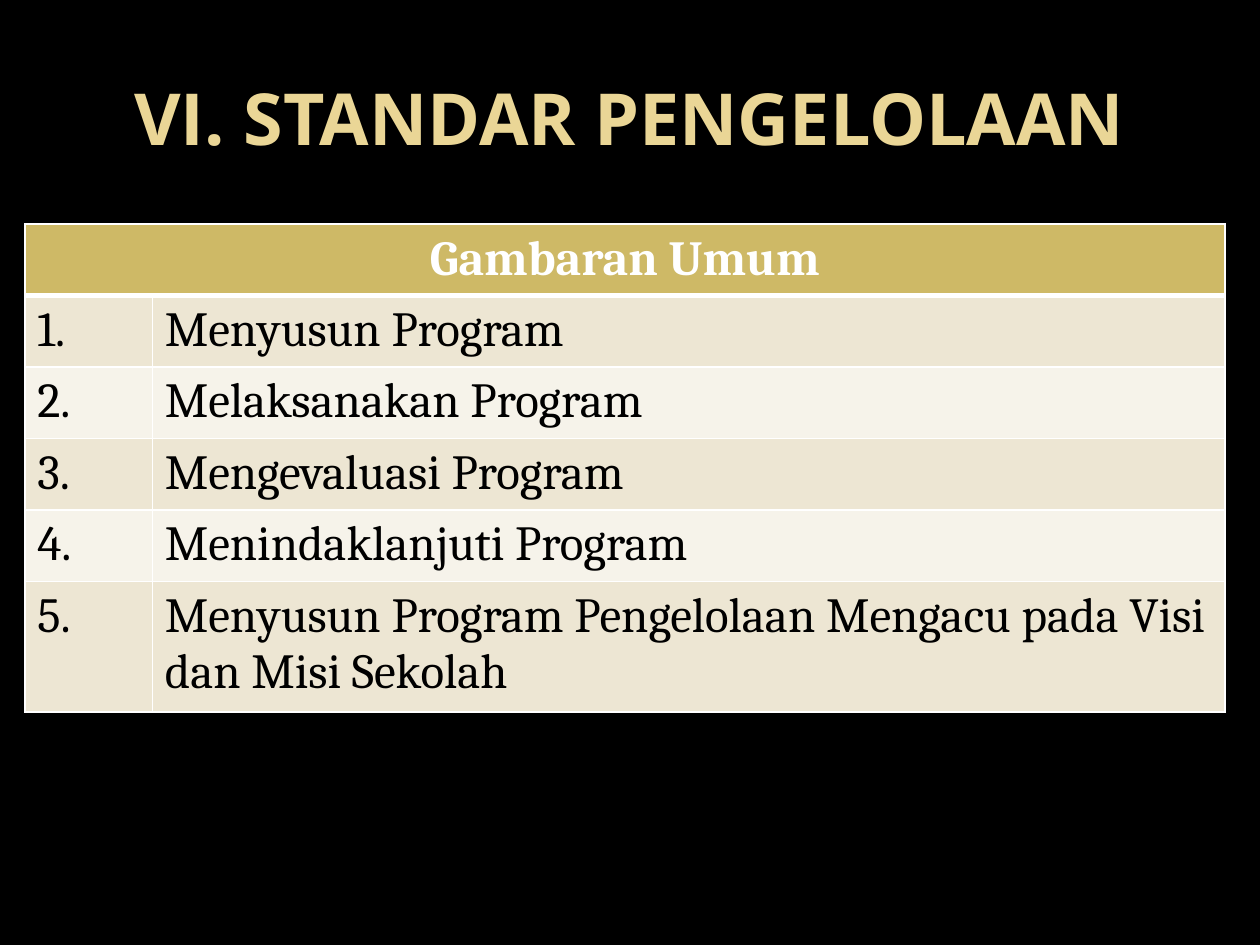
"""Build the slide on the management standard with its overview table."""
from lxml.etree import SubElement
from pptx import Presentation
from pptx.dml.color import RGBColor
from pptx.enum.text import MSO_ANCHOR as Anchor, PP_ALIGN as Align
from pptx.oxml.ns import qn
from pptx.util import Cm, Pt

BLACK, WHITE = "000000", "FFFFFF"
TITLE_GOLD, HEADER_GOLD = "EAD696", "CEB966"
BANDS = ("EDE6D3", "F6F3EA")
PROGRAMS = (
    "Menyusun Program",
    "Melaksanakan Program",
    "Mengevaluasi Program",
    "Menindaklanjuti Program",
    "Menyusun Program Pengelolaan Mengacu pada Visi dan Misi Sekolah",
)


def color(value):
    return RGBColor.from_string(value)


class SlideBuilder:
    title_font, body_font = "Open Sans", "Cambria"
    title_size, body_size = 41, 28
    thin, thick = 1, 3

    def __init__(self, deck):
        self.page = deck.slides.add_slide(deck.slide_layouts[6])

    def background(self, shade):
        fill = self.page.background.fill
        fill.solid()
        fill.fore_color.rgb = color(shade)

    def add_text(self, frame, text, font, size, shade, bold=False, align=Align.LEFT):
        para = frame.paragraphs[0]
        para.alignment = align
        span = para.add_run()
        span.text = text
        span.font.name = font
        span.font.size = Pt(size)
        span.font.bold = bold
        span.font.color.rgb = color(shade)

    def title(self, text, left, top, width, height):
        box = self.page.shapes.add_textbox(Cm(left), Cm(top), Cm(width), Cm(height))
        frame = box.text_frame
        frame.word_wrap = True
        frame.vertical_anchor = Anchor.MIDDLE
        self.add_text(frame, text, self.title_font, self.title_size, TITLE_GOLD,
                      True, Align.CENTER)

    def cell(self, cell, shade, top, bottom):
        properties = cell._tc.get_or_add_tcPr()
        widths = {"L": self.thin, "R": self.thin, "T": top, "B": bottom}
        for side, width in widths.items():
            line = SubElement(properties, qn(f"a:ln{side}"), w=str(Pt(width)))
            fill = SubElement(line, qn("a:solidFill"))
            SubElement(fill, qn("a:srgbClr"), val=WHITE)
        cell.fill.solid()
        cell.fill.fore_color.rgb = color(shade)

    def table(self, heading, items, left, top, widths, row_height):
        count = len(items) + 1
        grid = self.page.shapes.add_table(
            count, len(widths), Cm(left), Cm(top),
            Cm(sum(widths)), Cm(row_height * count)).table
        for column, width in zip(grid.columns, widths):
            column.width = Cm(width)
        for header in grid.rows[0].cells:
            self.cell(header, HEADER_GOLD, self.thin, self.thick)
        title = grid.cell(0, 0)
        title.merge(grid.cell(0, len(widths) - 1))
        title.vertical_anchor = Anchor.MIDDLE
        self.add_text(title.text_frame, heading, self.body_font, self.body_size,
                      WHITE, True, Align.CENTER)
        for number, item in enumerate(items, 1):
            top_line = self.thick if number == 1 else self.thin
            for cell, text in zip(grid.rows[number].cells, (f"{number}.", item)):
                self.cell(cell, BANDS[(number - 1) % 2], top_line, self.thin)
                self.add_text(cell.text_frame, text, self.body_font,
                              self.body_size, BLACK)


def main():
    deck = Presentation()
    deck.slide_width, deck.slide_height = Cm(25.4), Cm(19.05)
    slide = SlideBuilder(deck)
    slide.background(BLACK)
    slide.title("VI. STANDAR PENGELOLAAN", 1.27, 0.76, 22.86, 3.18)
    slide.table("Gambaran Umum", PROGRAMS, 0.5, 4.52, (2.57, 21.62), 1.04)
    deck.save("out.pptx")


if __name__ == "__main__":
    main()
